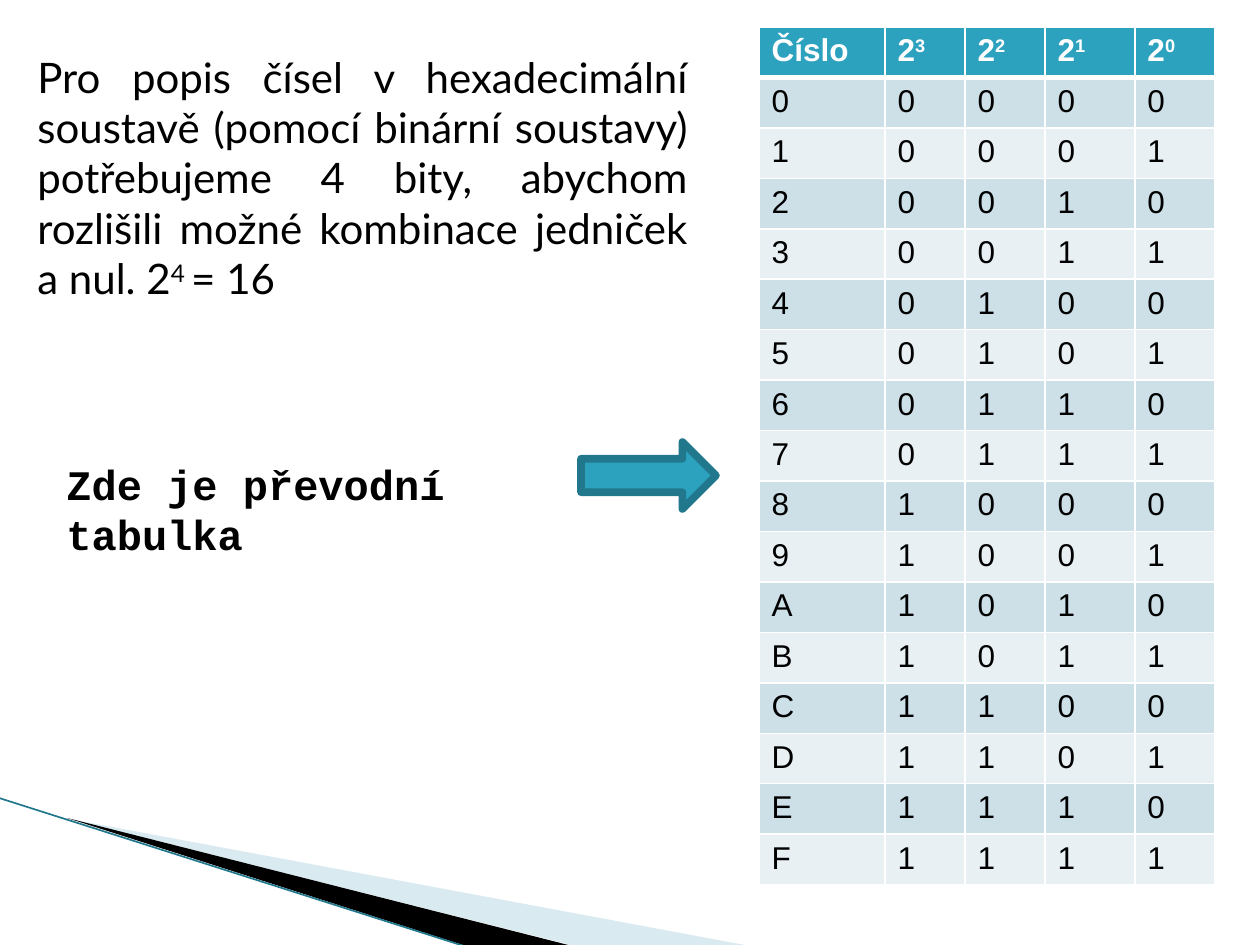
from lxml.etree import SubElement
from pptx import Presentation
from pptx.dml.color import RGBColor
from pptx.enum.shapes import MSO_CONNECTOR, MSO_SHAPE
from pptx.enum.text import MSO_AUTO_SIZE, PP_ALIGN
from pptx.oxml import parse_xml
from pptx.oxml.ns import nsdecls, qn
from pptx.util import Emu, Pt

SCALE = 914400 / 126
TEAL, DARK_TEAL, PALE_BLUE = "2DA2BF", "21788D", "A0CBDC"
BANDS = ("E8F0F4", "CDE0E8")
WHITE, BLACK = "FFFFFF", "000000"


def px(n):
    """Turn px into EMU."""
    return Emu(round(n * SCALE))


def rgb(value):
    """Turn a hex string into a colour."""
    return RGBColor.from_string(value)


class Deck:
    """Holds the style and the current slide."""

    def __init__(self, prs):
        """Set the slide size and add a blank slide."""
        prs.slide_width, prs.slide_height = px(1260), px(945)
        self.s = prs.slides.add_slide(prs.slide_layouts[6])

    def add_runs(self, p, runs, font, size, color=BLACK, bold=False):
        """Add (text, baseline) runs to a paragraph."""
        for text, baseline in runs:
            r = p.add_run()
            r.text = text
            r.font.name, r.font.size, r.font.bold = font, Pt(size), bold
            r.font.color.rgb = rgb(color)
            if baseline:
                r.font._element.set("baseline", str(baseline * 1000))

    def text(self, box, runs, font, align=PP_ALIGN.LEFT, bold=False):
        """Add a wrapped text box with one paragraph."""
        tf = self.s.shapes.add_textbox(*map(px, box)).text_frame
        tf.word_wrap = True
        tf.auto_size = MSO_AUTO_SIZE.SHAPE_TO_FIT_TEXT
        p = tf.paragraphs[0]
        p.alignment = align
        self.add_runs(p, runs, font, 24, bold=bold)

    def polygon(self, points, color, opacity=100):
        """Add a closed filled outline without a line."""
        fb = self.s.shapes.build_freeform(*points[0], scale=SCALE)
        fb.add_line_segments(points[1:], close=True)
        sp = fb.convert_to_shape()
        sp.shadow.inherit = False
        sp.fill.solid()
        sp.fill.fore_color.rgb = rgb(color)
        sp.line.fill.background()
        if opacity < 100:
            clr = sp._element.spPr.find(".//" + qn("a:srgbClr"))
            SubElement(clr, qn("a:alpha"), val=str(opacity * 1000))

    def line(self, start, end, color, width):
        """Add a straight line."""
        cx = self.s.shapes.add_connector(
            MSO_CONNECTOR.STRAIGHT, *map(px, start + end))
        cx.line.color.rgb, cx.line.width = rgb(color), Pt(width)
        SubElement(cx._element.spPr, qn("a:effectLst"))

    def arrow(self, box, fill, line, width):
        """Add a block arrow pointing right."""
        sp = self.s.shapes.add_shape(MSO_SHAPE.RIGHT_ARROW, *map(px, box))
        sp.shadow.inherit = False
        sp.fill.solid()
        sp.fill.fore_color.rgb = rgb(fill)
        sp.line.color.rgb, sp.line.width = rgb(line), Pt(width)
        SubElement(sp._element.spPr.find(qn("a:ln")), qn("a:round"))

    def borders(self, cell, widths):
        """Set white borders, widths in points by side."""
        tcPr = cell._tc.get_or_add_tcPr()
        for i, (side, width) in enumerate(widths.items()):
            tcPr.insert(i, parse_xml(
                f'<a:ln{side} {nsdecls("a")} w="{Pt(width)}"><a:solidFill>'
                f'<a:srgbClr val="{WHITE}"/></a:solidFill></a:ln{side}>'))

    def table(self, box, widths, rows):
        """Add a banded table with a bold header row."""
        tbl = self.s.shapes.add_table(
            len(rows), len(widths), *map(px, box)).table
        for col, width in zip(tbl.columns, widths):
            col.width = px(width)
        for i, row in enumerate(rows):
            head = i == 0
            for j, runs in enumerate(row):
                cell = tbl.cell(i, j)
                cell.fill.solid()
                cell.fill.fore_color.rgb = rgb(TEAL if head else BANDS[i % 2])
                self.borders(cell, {"L": 1, "R": 1, "T": 3 if i == 1 else 1,
                                    "B": 3 if head else 1})
                self.add_runs(cell.text_frame.paragraphs[0], runs, "Arial",
                              18, WHITE if head else BLACK, head)


def main():
    """Build and save the slide."""
    prs = Presentation()
    d = Deck(prs)
    d.polygon([(69, 819), (750, 946), (575, 946)], PALE_BLUE, 40)
    d.polygon([(67, 818), (576, 947), (469, 947)], BLACK)
    d.line((-1, 798), (467, 947), DARK_TEAL, 0.95)
    d.text((25, 45, 675, 267), [
        ("Pro popis čísel v hexadecimální soustavě (pomocí binární soustavy) "
         "potřebujeme 4 bity, abychom rozlišili možné kombinace jedniček "
         "a nul. 2", 0), ("4 ", 30), ("= 16", 0)], "Lato", PP_ALIGN.JUSTIFY)
    header = [[("Číslo", 0)]] + [[("2", 0), (e, 30)] for e in "3210"]
    digits = [[[(c, 0)] for c in f"{n:X}{n:04b}"] for n in range(16)]
    d.table((759, 27, 456, 857), (126, 80, 80, 90, 80), [header] + digits)
    d.text((54, 452, 527, 64), [("Zde je převodní tabulka", 0)],
           "Courier New", bold=True)
    d.arrow((581, 442, 135, 67), TEAL, DARK_TEAL, 4.33)
    prs.save("out.pptx")


if __name__ == "__main__":
    main()
